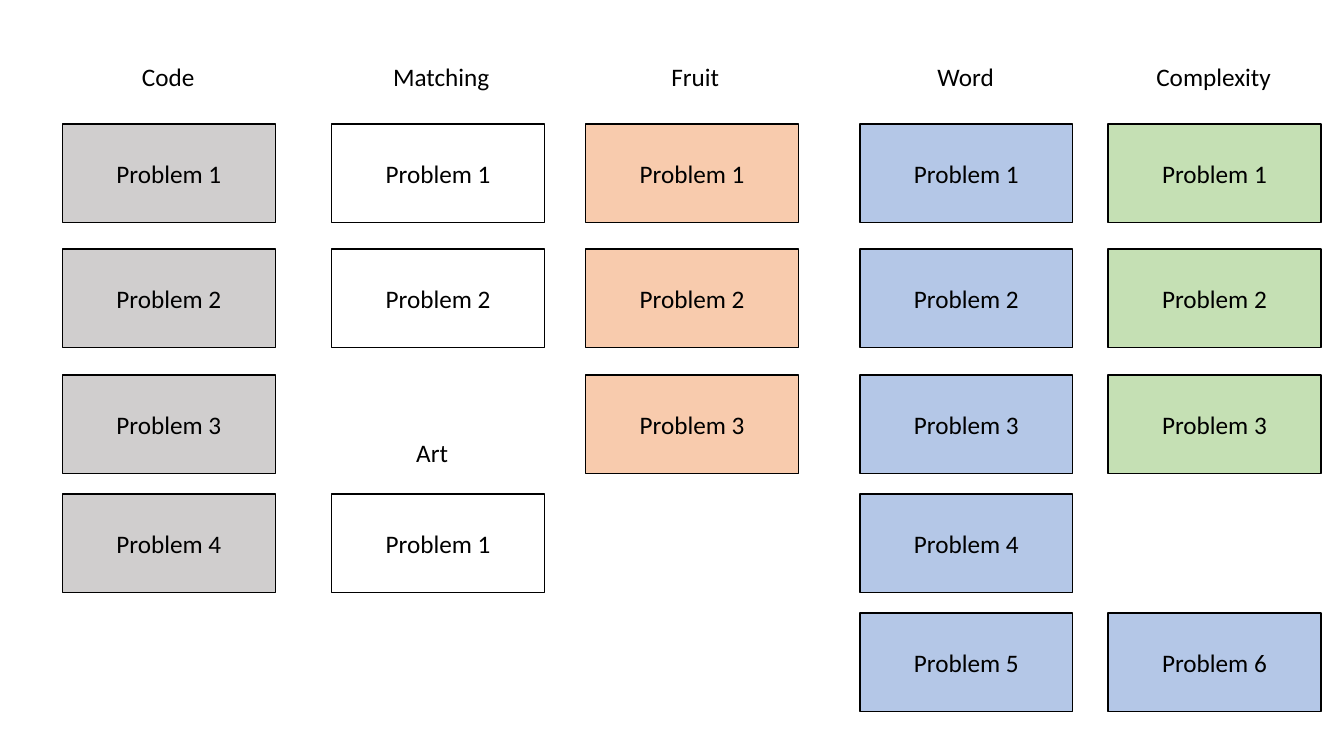
from pptx import Presentation
from pptx import util as u
from pptx.dml.color import RGBColor
from pptx.enum import shapes, text

# Grid in inches: column lefts, row tops, and the size of one button
COLUMNS = [0.62, 3.29, 5.81, 8.53, 10.99]
ROWS = [1.23, 2.47, 3.72, 4.9, 6.08]
BUTTON_WIDTH, BUTTON_HEIGHT = 2.11, 0.98
HEADING_TOP, HEADING_HEIGHT = 0.56, 0.4
ART_TOP = 4.29

GREY, WHITE, ORANGE, BLUE, GREEN = "D0CECE", "FFFFFF", "F8CBAD", "B4C7E7", "C5E0B4"
BLACK = "000000"

# Heading, its left and width, the column's colour and its number of problems
CATEGORIES = [
    ("Code", 1.31, 0.73, GREY, 4),
    ("Matching", 3.8, 1.17, WHITE, 2),
    ("Fruit", 6.56, 0.68, ORANGE, 3),
    ("Word", 9.2, 0.77, BLUE, 5),
    ("Complexity", 11.37, 1.35, GREEN, 3),
]


def color(hex_string):
    return RGBColor.from_string(hex_string)


def write(frame, words, align):
    frame.text = words
    para = frame.paragraphs[0]
    para.alignment = align
    font = para.runs[0].font
    font.name = "Calibri"
    font.size = u.Pt(18)
    font.color.rgb = color(BLACK)


def add_heading(page, words, left, top, width, wrap=False):
    box = page.shapes.add_textbox(
        u.Inches(left), u.Inches(top), u.Inches(width), u.Inches(HEADING_HEIGHT))
    write(box.text_frame, words, text.PP_ALIGN.LEFT)
    box.text_frame.word_wrap = wrap
    box.text_frame.auto_size = text.MSO_AUTO_SIZE.SHAPE_TO_FIT_TEXT


def add_problem(page, number, column, row, fill):
    button = page.shapes.add_shape(
        shapes.MSO_SHAPE.ACTION_BUTTON_CUSTOM,
        u.Inches(COLUMNS[column]), u.Inches(ROWS[row]),
        u.Inches(BUTTON_WIDTH), u.Inches(BUTTON_HEIGHT))
    button.shadow.inherit = False
    button.fill.solid()
    button.fill.fore_color.rgb = color(fill)
    button.line.color.rgb = color(BLACK)
    button.line.width = u.Pt(1)
    button.text_frame.vertical_anchor = text.MSO_ANCHOR.MIDDLE
    write(button.text_frame, f"Problem {number}", text.PP_ALIGN.CENTER)


def main():
    deck = Presentation()
    deck.slide_width, deck.slide_height = u.Inches(13.33), u.Inches(7.5)
    page = deck.slides.add_slide(deck.slide_layouts[6])

    # One column of problems under each category heading
    for column, (name, left, width, fill, count) in enumerate(CATEGORIES):
        add_heading(page, name, left, HEADING_TOP, width)
        for row in range(count):
            add_problem(page, row + 1, column, row, fill)

    # Art category, below Matching
    add_heading(page, "Art", 4.03, ART_TOP, 0.71, wrap=True)
    add_problem(page, 1, 1, 3, WHITE)

    # Sixth Word problem, beside the fifth
    add_problem(page, 6, 4, 4, BLUE)

    deck.save("out.pptx")


if __name__ == "__main__":
    main()
